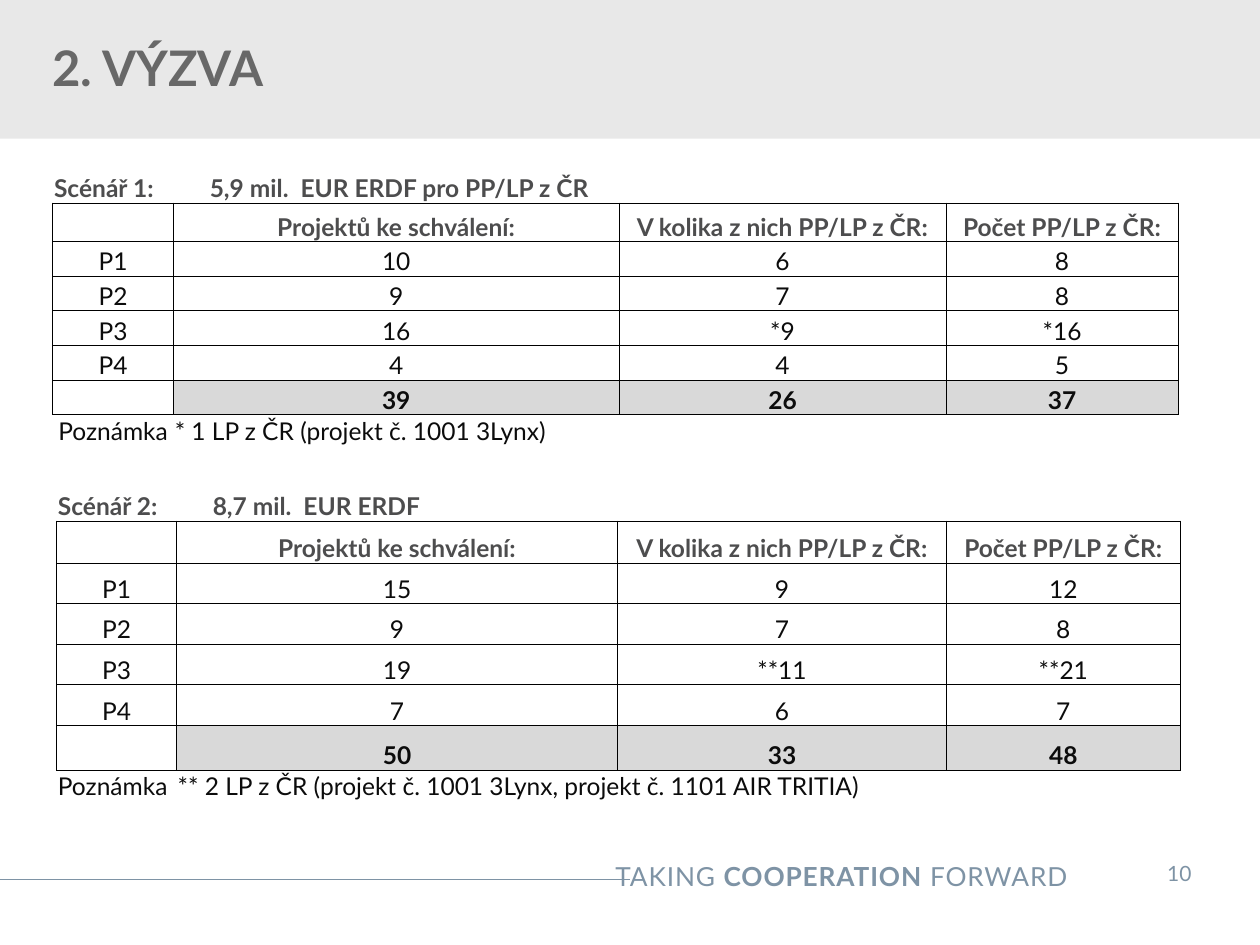
from lxml.etree import SubElement
from pptx import Presentation
from pptx.dml.color import RGBColor
from pptx.enum.shapes import MSO_CONNECTOR, MSO_SHAPE
from pptx.enum.text import MSO_ANCHOR, MSO_AUTO_SIZE, PP_ALIGN
from pptx.oxml.ns import qn
from pptx.util import Pt

COLORS = {"band": "E8E8E8", "title": "686868", "head": "4D4D4E", "body": "0C0C0C",
          "footer": "7E93A5", "total": "D9D9D9", "border": "000000"}
NO_GRID = "{2D5ABB26-0587-4C30-8999-92F81FD0307C}"
LEFT, CENTER, RIGHT = PP_ALIGN.LEFT, PP_ALIGN.CENTER, PP_ALIGN.RIGHT


class Deck:
    """Holds the style and the current slide; lengths are in points."""
    font = "Lato"

    def __init__(self):
        self.prs = Presentation()
        self.prs.slide_width, self.prs.slide_height = Pt(720), Pt(540)
        self.s = self.prs.slides.add_slide(self.prs.slide_layouts[5])

    def color(self, name):
        return RGBColor.from_string(COLORS[name])

    def frame(self, tf, margins, anchor):
        values = dict(zip(("margin_left", "margin_top", "margin_right", "margin_bottom"),
                          map(Pt, margins)))
        values.update(vertical_anchor=anchor, auto_size=MSO_AUTO_SIZE.NONE)
        for key, value in values.items():
            setattr(tf, key, value)

    def paragraph(self, p, runs, size, color, align=LEFT, indent=0, spacing=0):
        """Fill a paragraph with (text, bold) runs."""
        p.alignment = align
        if indent:
            pPr = p._p.get_or_add_pPr()
            pPr.set("marL", str(Pt(indent)))
            pPr.set("indent", "0")
        for text, bold in runs:
            r = p.add_run()
            r.text = text
            for key, value in {"name": self.font, "size": Pt(size), "bold": bold}.items():
                setattr(r.font, key, value)
            r.font.color.rgb = self.color(color)
            if spacing:
                r._r.get_or_add_rPr().set("spc", str(int(spacing * 100)))

    def title(self, text, x, y, w, h):
        sp = self.s.shapes.title
        sp.left, sp.top, sp.width, sp.height = map(Pt, (x, y, w, h))
        self.frame(sp.text_frame, (7.2, 3.6, 7.2, 3.6), MSO_ANCHOR.MIDDLE)
        self.paragraph(sp.text_frame.paragraphs[0], [(text, True)], 28, "title", indent=17)

    def band(self, x, y, w, h):
        sp = self.s.shapes.add_shape(MSO_SHAPE.RECTANGLE, *map(Pt, (x, y, w, h)))
        sp.shadow.inherit = False
        sp.fill.solid()
        sp.fill.fore_color.rgb = self.color("band")
        sp.line.fill.background()
        self.s.shapes._spTree.insert(2, sp._element)  # behind the title

    def line(self, x1, y1, x2, y2):
        cx = self.s.shapes.add_connector(MSO_CONNECTOR.STRAIGHT, *map(Pt, (x1, y1, x2, y2)))
        cx.line.color.rgb = self.color("footer")
        cx.line.width = Pt(0.75)
        SubElement(cx._element.spPr, qn("a:effectLst"))

    def text(self, runs, x, y, w, h, size, align, margins, spacing=0):
        tf = self.s.shapes.add_textbox(*map(Pt, (x, y, w, h))).text_frame
        tf.word_wrap = True
        self.frame(tf, margins, MSO_ANCHOR.TOP)
        self.paragraph(tf.paragraphs[0], runs, size, "footer", align, spacing=spacing)

    def cell(self, cell, text, edges, color="body", bold=False, align=CENTER, indent=0,
             fill=None):
        cell.margin_left = cell.margin_right = cell.margin_top = Pt(0.7)
        cell.margin_bottom = Pt(0)
        cell.vertical_anchor = MSO_ANCHOR.BOTTOM
        p = cell.text_frame.paragraphs[0]
        if text:
            self.paragraph(p, [(text, bold)], 14, color, align, indent)
        else:
            p._p.get_or_add_endParaRPr().set("sz", "1400")
        tcPr = cell._tc.get_or_add_tcPr()
        for edge in edges:
            ln = SubElement(tcPr, qn("a:ln" + edge), w=str(Pt(0.5)))
            SubElement(SubElement(ln, qn("a:solidFill")), qn("a:srgbClr"),
                       val=COLORS["border"])
        if fill:
            cell.fill.solid()
            cell.fill.fore_color.rgb = self.color(fill)
        else:
            cell.fill.background()

    def table(self, x, y, widths, heights, rows, note_align):
        """Caption row, header row, body rows, total row and note row."""
        gf = self.s.shapes.add_table(len(rows), len(widths), Pt(x), Pt(y),
                                     Pt(sum(widths)), Pt(sum(heights)))
        tbl = gf.table
        tbl.first_row = tbl.horz_banding = False
        gf._element.find(".//" + qn("a:tableStyleId")).text = NO_GRID
        for col, width in zip(tbl.columns, widths):
            col.width = Pt(width)
        for row, height in zip(tbl.rows, heights):
            row.height = Pt(height)
        last = len(rows) - 1
        for i, row in enumerate(rows):
            for j, text in enumerate(row):
                edges, style = "LRTB", {}
                if i == 0:
                    edges = "B"
                    style = dict(color="head", bold=True, align=LEFT, indent=20 if j else 0)
                elif i == 1:
                    style = dict(color="head", bold=True)
                elif i == last:
                    edges, style = "T", dict(align=LEFT if j else note_align)
                elif i == last - 1 and j:
                    style = dict(bold=True, fill="total")
                self.cell(tbl.cell(i, j), text, edges, **style)
        tbl.cell(last, 1).merge(tbl.cell(last, 2))


HEADER = ["", "Projektů ke schválení:", "V kolika z nich PP/LP z ČR:", "Počet PP/LP z ČR:"]


def scenario(name, budget, values, totals, note):
    body = [[f"P{n}", *row] for n, row in enumerate(values, 1)]
    return [[name, budget, "", ""], HEADER, *body, ["", *totals],
            ["Poznámka", note, "", ""]]


def main():
    d = Deck()

    # Header
    d.band(0, 0, 720, 79.2)
    d.title("2. VÝZVA", 5.8, 11.5, 513, 54)

    # Scenario tables
    d.table(30.2, 90, [69, 254.5, 187, 132.5], [26, 22, *[19.8] * 5, 17],
            scenario("Scénář 1:", "5,9 mil.  EUR ERDF pro PP/LP z ČR",
                     [("10", "6", "8"), ("9", "7", "8"), ("16", "*9", "*16"),
                      ("4", "4", "5")],
                     ("39", "26", "37"), "* 1 LP z ČR (projekt č. 1001 3Lynx)"), CENTER)
    d.table(32.4, 280, [68.5, 252, 188, 133.5], [17.5, 24, *[23.2] * 4, 25.5, 17],
            scenario("Scénář 2:", "8,7 mil.  EUR ERDF",
                     [("15", "9", "12"), ("9", "7", "8"), ("19", "**11", "**21"),
                      ("7", "6", "7")],
                     ("50", "33", "48"),
                     "** 2 LP z ČR (projekt č. 1001 3Lynx, projekt č. 1101 AIR TRITIA)"),
            LEFT)

    # Footer
    d.line(0, 502.5, 360, 502.5)
    d.text([("TAKING ", False), ("COOPERATION", True), (" FORWARD", False)],
           279.4, 488.2, 337.7, 25.2, 15, RIGHT, (7.2, 3.6, 7.2, 3.6), spacing=0.5)
    d.text([("10", False)], 647.3, 484.6, 53.3, 28.8, 12, CENTER, (14.4, 7.2, 14.4, 7.2))

    d.prs.save("out.pptx")


if __name__ == "__main__":
    main()
